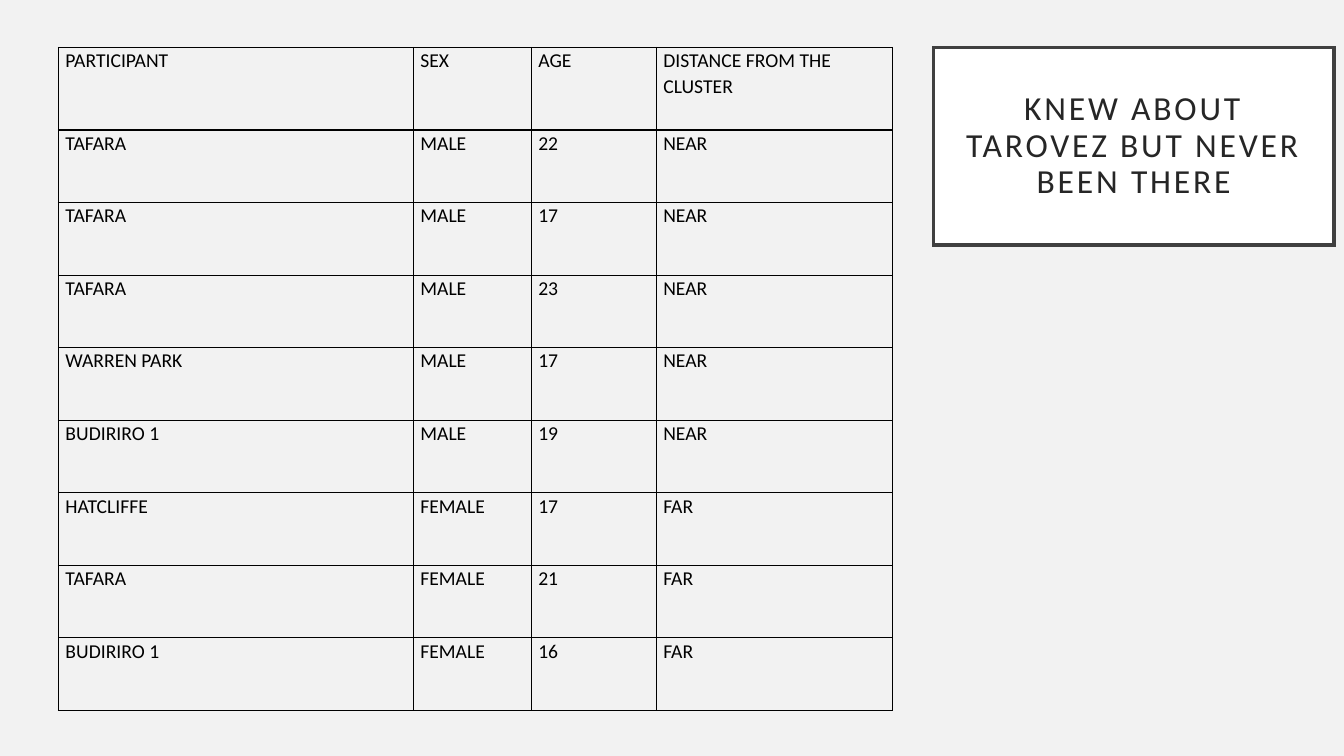
from lxml import etree
from pptx import Presentation
from pptx import util as u
from pptx.dml import color
from pptx.enum import shapes, text
from pptx.oxml import ns

FONT = "Calibri"
COLUMN_WIDTHS = [3.52, 1.17, 1.24, 2.34]
HEADER_HEIGHT, ROW_HEIGHT = 0.82, 0.72
PARTICIPANTS = [
    ("PARTICIPANT", "SEX", "AGE", "DISTANCE FROM THE CLUSTER"),
    ("TAFARA", "MALE", "22", "NEAR"),
    ("TAFARA", "MALE", "17", "NEAR"),
    ("TAFARA", "MALE", "23", "NEAR"),
    ("WARREN PARK", "MALE", "17", "NEAR"),
    ("BUDIRIRO 1", "MALE", "19", "NEAR"),
    ("HATCLIFFE", "FEMALE", "17", "FAR"),
    ("TAFARA", "FEMALE", "21", "FAR"),
    ("BUDIRIRO 1", "FEMALE", "16", "FAR"),
]


def rgb(value):
    """Turn a hex string into a colour."""
    return color.RGBColor.from_string(value)


def set_margins(holder, sides, ends):
    """Set the inner margins of a cell or text frame in inches."""
    holder.margin_left = holder.margin_right = u.Inches(sides)
    holder.margin_top = holder.margin_bottom = u.Inches(ends)


def write(frame, wording, size, ink, spacing):
    """Write one run into the first paragraph and return both."""
    paragraph = frame.paragraphs[0]
    paragraph.line_spacing = spacing
    run = paragraph.add_run()
    run.text = wording
    run.font.name = FONT
    run.font.size = u.Pt(size)
    run.font.color.rgb = rgb(ink)
    return paragraph, run


def add_borders(cell, ink, width):
    """Draw a solid line on every side of a cell."""
    properties = cell._tc.get_or_add_tcPr()
    for side in ("lnL", "lnR", "lnT", "lnB"):
        border = etree.SubElement(properties, ns.qn(f"a:{side}"), w=str(u.Pt(width)))
        solid = etree.SubElement(border, ns.qn("a:solidFill"))
        etree.SubElement(solid, ns.qn("a:srgbClr"), val=ink)


def add_title(slide, wording):
    """Add the sharp-cornered title frame with widely spaced letters."""
    title = slide.shapes.add_shape(
        shapes.MSO_SHAPE.RECTANGLE,
        u.Inches(9.26), u.Inches(0.47), u.Inches(3.97), u.Inches(1.96))
    title.shadow.inherit = False
    title.fill.solid()
    title.fill.fore_color.rgb = rgb("FFFFFF")
    title.line.color.rgb = rgb("404040")
    title.line.width = u.Pt(2.5)
    etree.SubElement(title.line._ln, ns.qn("a:miter"), lim="800000")
    frame = title.text_frame
    frame.word_wrap = True
    frame.vertical_anchor = text.MSO_ANCHOR.MIDDLE
    set_margins(frame, 0.2, 0.2)
    paragraph, run = write(frame, wording, 24, "262626", 0.9)
    paragraph.alignment = text.PP_ALIGN.CENTER
    run._r.get_or_add_rPr().set("spc", "200")


def add_participants(slide, records):
    """Add the bordered table of participants."""
    heights = [HEADER_HEIGHT] + [ROW_HEIGHT] * (len(records) - 1)
    table = slide.shapes.add_table(
        len(records), len(COLUMN_WIDTHS), u.Inches(0.58), u.Inches(0.47),
        u.Inches(sum(COLUMN_WIDTHS)), u.Inches(sum(heights))).table
    table.first_row = table.horz_banding = False
    for column, width in zip(table.columns, COLUMN_WIDTHS):
        column.width = u.Inches(width)
    for row, height, record in zip(table.rows, heights, records):
        row.height = u.Inches(height)
        for cell, wording in zip(row.cells, record):
            set_margins(cell, 0.07, 0)
            write(cell.text_frame, wording, 14, "000000", 1.07)
            add_borders(cell, "000000", 1)
            cell.fill.background()


def main():
    """Build the slide and save it."""
    deck = Presentation()
    deck.slide_width, deck.slide_height = u.Inches(13.33), u.Inches(7.5)
    slide = deck.slides.add_slide(deck.slide_layouts[6])
    slide.background.fill.solid()
    slide.background.fill.fore_color.rgb = rgb("F2F2F2")
    add_title(slide, "KNEW ABOUT TAROVEZ BUT NEVER BEEN THERE")
    add_participants(slide, PARTICIPANTS)
    deck.save("out.pptx")


if __name__ == "__main__":
    main()
